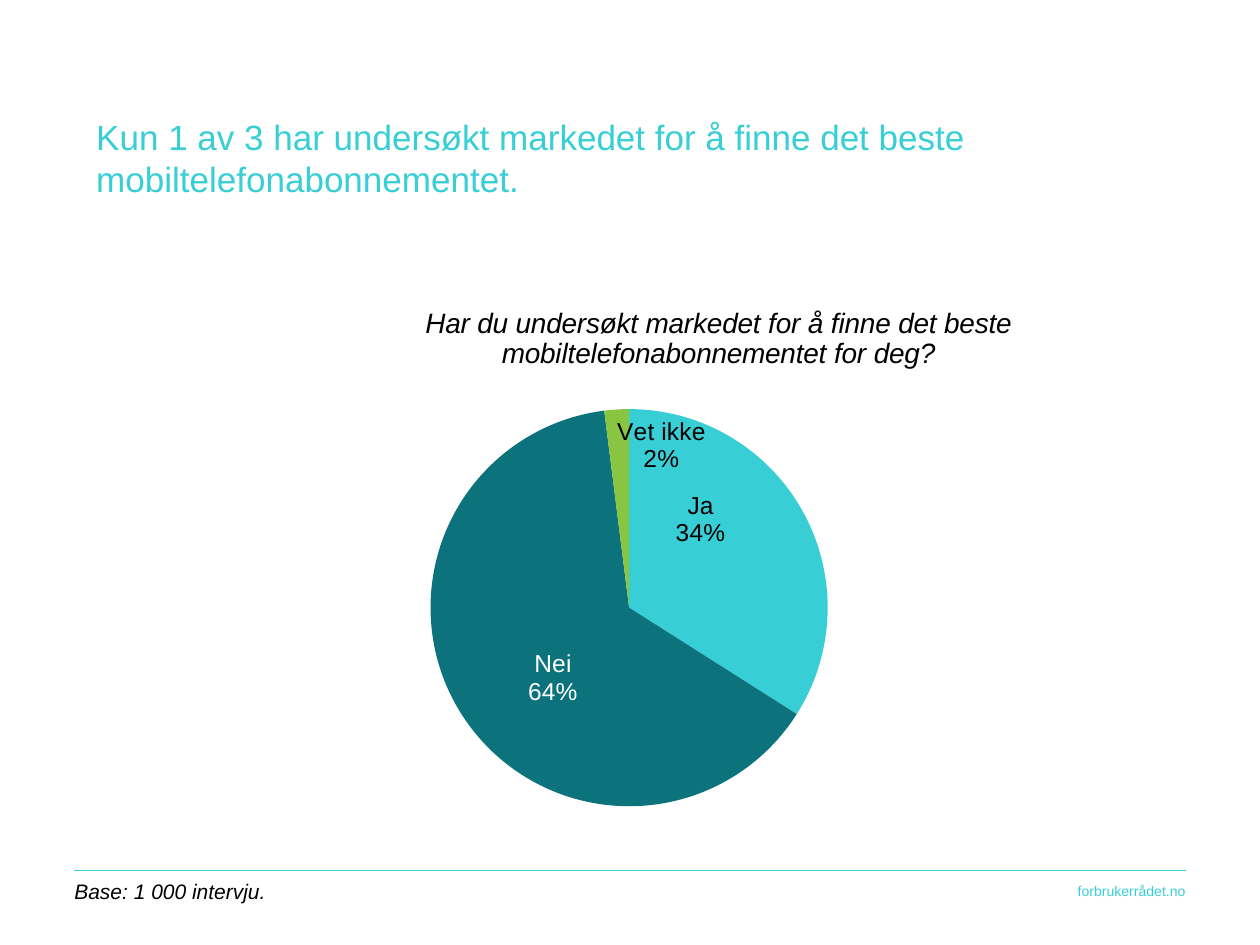
"""Builds a survey slide with a headline, a pie chart and a footer."""
from dataclasses import dataclass

import pptx
import pptx.chart.data
import pptx.dml.color
import pptx.enum.chart
import pptx.enum.shapes
import pptx.enum.text
import pptx.oxml
import pptx.oxml.ns
import pptx.util

Pt = pptx.util.Pt
RGB = pptx.dml.color.RGBColor.from_string
ALIGN = pptx.enum.text.PP_ALIGN


@dataclass(frozen=True)
class Theme:
    """Colours, type sizes and font of the slide."""
    font: str = "Arial"
    accent: str = "38CED5"
    rule: str = "33CDD4"
    dark: str = "0C737D"
    green: str = "89C540"
    black: str = "000000"
    white: str = "FFFFFF"
    headline: int = 20
    question: int = 16
    label: int = 14
    note: int = 12
    site: int = 8


THEME = Theme()
SLICES = [
    ("Ja", 34, THEME.accent, THEME.black, (-0.02, -0.07)),
    ("Nei", 64, THEME.dark, THEME.white, (0.01, 0.03)),
    ("Vet ikke", 2, THEME.green, THEME.black, (0.05, -0.11)),
]


def style_font(font, size, colour, italic=False):
    """Set face, size, colour and slant of a font."""
    font.name, font.size = THEME.font, Pt(size)
    font.bold, font.italic = False, italic
    font.color.rgb = RGB(colour)


def add_text(page, box, text, size, colour, italic=False, align=ALIGN.LEFT):
    """Place one wrapped paragraph in a box without margins."""
    frame = page.shapes.add_textbox(*map(Pt, box)).text_frame
    frame.word_wrap = True
    frame.margin_left = frame.margin_right = frame.margin_top = frame.margin_bottom = 0
    para = frame.paragraphs[0]
    para.text, para.alignment = text, align
    style_font(para.font, size, colour, italic)
    return para


def manual_layout(x, y, size=None):
    """Return a chart layout, with a fixed inner plot area if a size is given."""
    values = [("x", x), ("y", y)]
    modes = []
    if size:
        modes = [("layoutTarget", "inner"), ("xMode", "edge"), ("yMode", "edge")]
        values += zip("wh", size)
    parts = "".join(f'<c:{name} val="{value}"/>' for name, value in modes + values)
    return pptx.oxml.parse_xml(
        f'<c:layout {pptx.oxml.ns.nsdecls("c")}><c:manualLayout>{parts}'
        "</c:manualLayout></c:layout>"
    )


def set_layout(element, layout, after=None):
    """Replace the layout of a chart element, after the named child or first."""
    name = pptx.oxml.ns.qn("c:layout")
    for old in element.findall(name):
        element.remove(old)
    if after is None:
        element.insert(0, layout)
    else:
        element.find(pptx.oxml.ns.qn(after)).addnext(layout)


def add_headline(page, box):
    """Place the headline in its box."""
    para = add_text(
        page, box,
        "Kun 1 av 3 har undersøkt markedet for å finne det beste mobiltelefonabonnementet.",
        THEME.headline, THEME.accent,
    )
    para.line_spacing = Pt(24)


def add_question(chart):
    """Set the survey question as chart title."""
    para = chart.chart_title.text_frame.paragraphs[0]
    para.text = "Har du undersøkt markedet for å finne det beste mobiltelefonabonnementet for deg?"
    style_font(para.font, THEME.question, THEME.black, italic=True)
    layout = manual_layout(0.1, 0.01)
    for mode in ("yMode", "xMode"):
        layout[0].insert(0, pptx.oxml.parse_xml(
            f'<c:{mode} {pptx.oxml.ns.nsdecls("c")} val="edge"/>'))
    set_layout(chart.chart_title._element, layout, after="c:tx")


def add_pie(page, box):
    """Place the pie chart with its question and labelled slices."""
    data = pptx.chart.data.CategoryChartData(number_format="0")
    data.categories = [name for name, *_ in SLICES]
    data.add_series("Series 1", [value for _, value, *_ in SLICES])
    chart = page.shapes.add_chart(
        pptx.enum.chart.XL_CHART_TYPE.PIE, *map(Pt, box), data).chart
    chart.has_legend = False
    style_font(chart.font, THEME.label, THEME.black)
    add_question(chart)
    plot = chart.plots[0]
    plot.vary_by_categories = True
    set_layout(plot._element.getparent(), manual_layout(0.08, 0.2, (0.58, 0.69)))
    series = plot.series[0]
    labels = series.data_labels
    labels.show_percentage = labels.show_category_name = True
    labels.show_value = False
    labels.number_format, labels.number_format_is_linked = "0%", False
    labels.position = pptx.enum.chart.XL_LABEL_POSITION.CENTER
    style_font(labels.font, THEME.label, THEME.white)
    for index, (_, _, fill, ink, offset) in enumerate(SLICES):
        point = series.points[index]
        point.format.fill.solid()
        point.format.fill.fore_color.rgb = RGB(fill)
        point.format.line.fill.background()
        style_font(point.data_label.font, THEME.label, ink)
        point.data_label.position = pptx.enum.chart.XL_LABEL_POSITION.CENTER
        label = labels._element.findall(pptx.oxml.ns.qn("c:dLbl"))[index]
        for tag, shown in (("c:showVal", "0"), ("c:showCatName", "1"), ("c:showPercent", "1")):
            label.find(pptx.oxml.ns.qn(tag)).set("val", shown)
        set_layout(label, manual_layout(*offset), after="c:idx")


def add_footer(page, box):
    """Place the rule, the sample note and the web address."""
    left, top, width, height = box
    rule = page.shapes.add_connector(
        pptx.enum.shapes.MSO_CONNECTOR.STRAIGHT,
        Pt(left), Pt(top), Pt(left + width), Pt(top))
    rule.line.color.rgb, rule.line.width = RGB(THEME.rule), Pt(0.92)
    rule._element.spPr.append(
        pptx.oxml.parse_xml(f'<a:effectLst {pptx.oxml.ns.nsdecls("a")}/>'))
    add_text(page, (left, top + 4.5, width / 2, height - 4.5),
             "Base: 1 000 intervju.", THEME.note, THEME.black, italic=True)
    add_text(page, (left + width / 2, top + 7, width / 2, height - 7),
             "forbrukerrådet.no", THEME.site, THEME.accent, align=ALIGN.RIGHT)


def main():
    """Build and save the deck."""
    deck = pptx.Presentation()
    deck.slide_width, deck.slide_height = Pt(720), Pt(540)
    page = deck.slides.add_slide(deck.slide_layouts[6])
    add_headline(page, (55, 66, 572, 48))
    add_pie(page, (196, 168, 442, 329))
    add_footer(page, (42.5, 497.5, 635, 33))
    deck.save("out.pptx")


if __name__ == "__main__":
    main()
